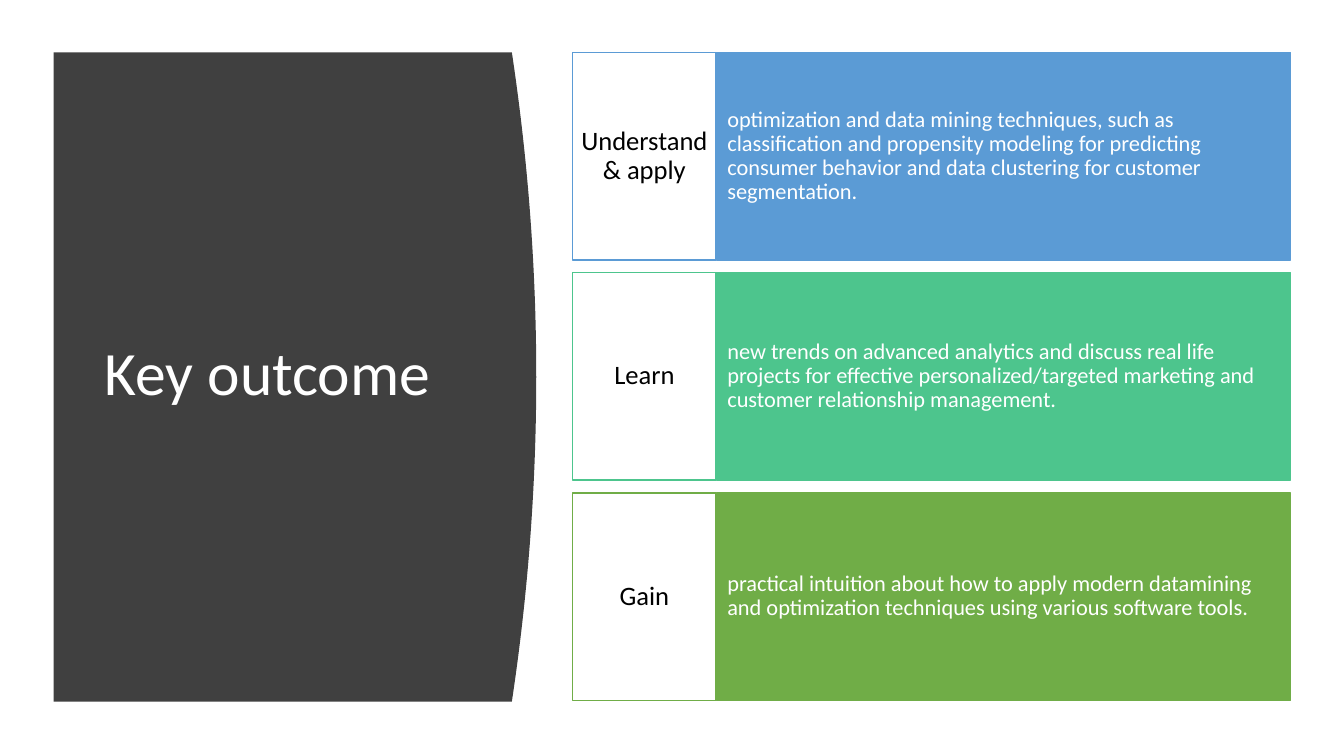
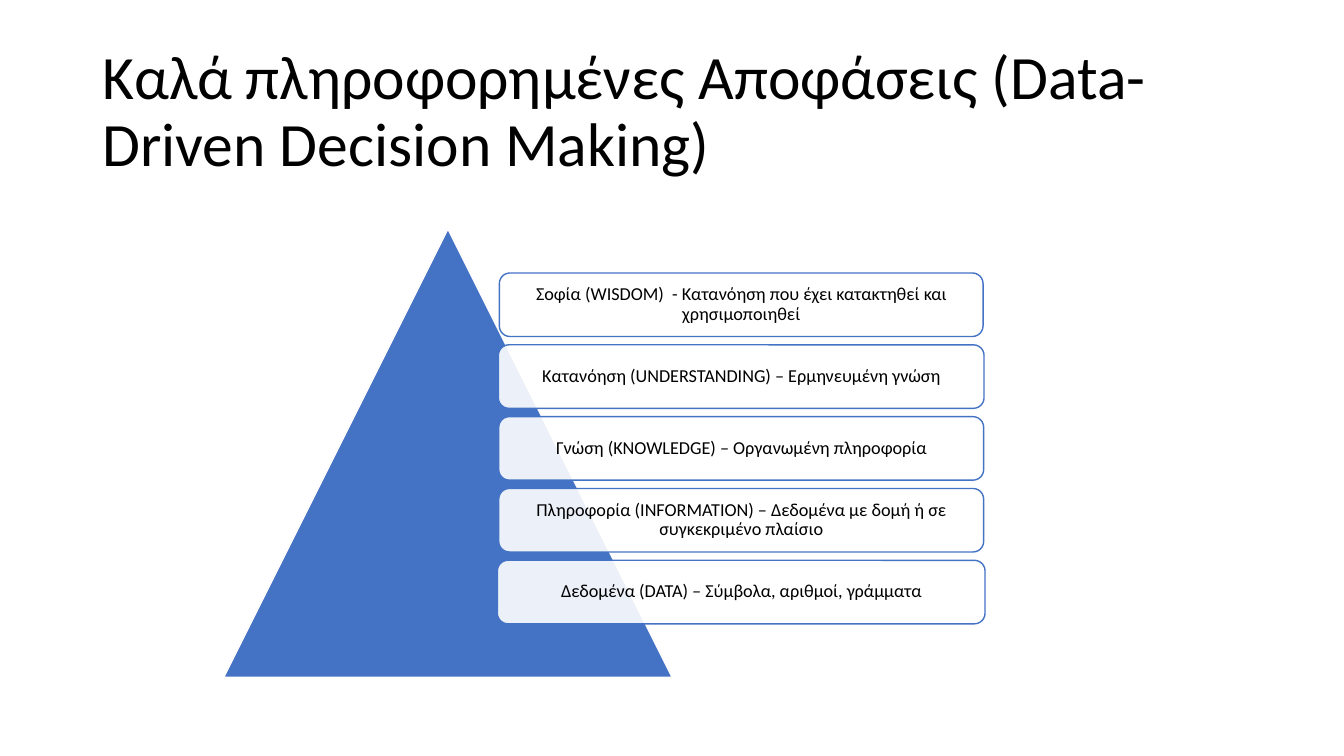
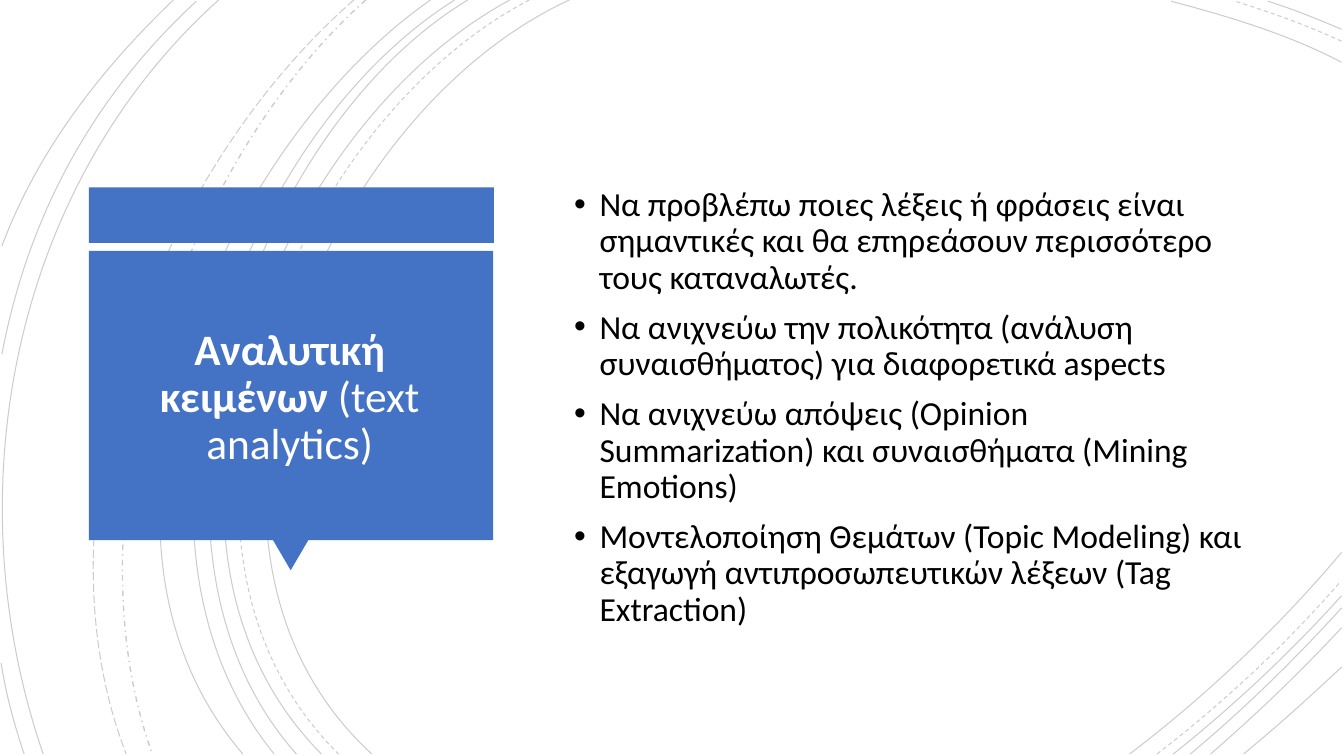
from dataclasses import dataclass
from typing import Any

from lxml import etree
from pptx import Presentation, util as u
from pptx.dml.color import RGBColor
from pptx.enum import dml, shapes, text
from pptx.oxml.ns import qn

FONT = "Calibri"
WHITE, BLACK, CHARCOAL, BLUE = "FFFFFF", "000000", "404040", "4472C4"
SOLID = dml.MSO_LINE.SOLID
SHAPE = shapes.MSO_SHAPE
LEFT, CENTER = text.PP_ALIGN.LEFT, text.PP_ALIGN.CENTER
DEFAULT_INSET = (0.25, 0.13)

Point = tuple[float, float]
Box = tuple[float, float, float, float]


@dataclass(frozen=True)
class Outcome:
    label: str
    detail: str
    color: str


@dataclass(frozen=True)
class Level:
    content: str
    width: float


@dataclass(frozen=True)
class Arc:
    start: Point
    control_a: Point
    control_b: Point
    end: Point
    dash: Any = SOLID
    weight: float = 0.75


OUTCOMES = [
    Outcome("Understand & apply", "optimization and data mining techniques, such as classification and propensity "
            "modeling for predicting consumer behavior and data clustering for customer segmentation.", "5B9BD5"),
    Outcome("Learn", "new trends on advanced analytics and discuss real life projects for effective "
            "personalized/targeted marketing and customer relationship management.", "4DC58D"),
    Outcome("Gain", "practical intuition about how to apply modern datamining and optimization techniques "
            "using various software tools.", "70AD47"),
]

LEVELS = [
    Level("Σοφία (WISDOM)  - Κατανόηση που έχει κατακτηθεί και χρησιμοποιηθεί", 12.19),
    Level("Κατανόηση (UNDERSTANDING) – Ερμηνευμένη γνώση", 12.24),
    Level("Γνώση (KNOWLEDGE) – Οργανωμένη πληροφορία", 12.22),
    Level("Πληροφορία (INFORMATION) – Δεδομένα με δομή ή σε συγκεκριμένο πλαίσιο", 12.22),
    Level("Δεδομένα (DATA) – Σύμβολα, αριθμοί, γράμματα", 12.29),
]

GOALS = [
    "Να προβλέπω ποιες λέξεις ή φράσεις είναι σημαντικές και θα επηρεάσουν περισσότερο τους καταναλωτές.",
    "Να ανιχνεύω την πολικότητα (ανάλυση συναισθήματος) για διαφορετικά aspects",
    "Να ανιχνεύω απόψεις (Opinion Summarization) και συναισθήματα (Mining Emotions)",
    "Μοντελοποίηση Θεμάτων (Topic Modeling) και εξαγωγή αντιπροσωπευτικών λέξεων (Tag Extraction)",
]

ARCS = [
    Arc((14.35, 0), (8, 2.92), (3.63, 13.72), (9.37, 19)),
    Arc((33.81, 1.57), (32.46, 0.86), (30.94, 0.41), (29.51, 0.03)),
    Arc((28.47, 19), (30.4, 17.53), (32.23, 15.8), (33.81, 13.92)),
    Arc((13.34, 0), (7.24, 3.18), (3.12, 13.64), (8.53, 19), dml.MSO_LINE.DASH),
    Arc((33.81, 1.04), (32.94, 0.64), (32, 0.3), (31.12, 0.03), dml.MSO_LINE.DASH),
    Arc((29.16, 19), (30.81, 17.73), (32.39, 16.26), (33.78, 14.66), dml.MSO_LINE.DASH),
    Arc((12.85, 0), (6.86, 3.23), (2.79, 13.64), (8.1, 19)),
    Arc((33.81, 0.74), (33.2, 0.48), (32.59, 0.23), (31.95, 0.03)),
    Arc((29.57, 19), (31.06, 17.81), (32.51, 16.46), (33.81, 15.01)),
    Arc((11.79, 0), (6.2, 3.38), (2.79, 13.74), (7.47, 19)),
    Arc((30, 19), (31.34, 17.88), (32.61, 16.64), (33.81, 15.32)),
    Arc((11.46, 0), (5.87, 3.51), (2.46, 13.54), (6.91, 19)),
    Arc((30.51, 19), (31.65, 18.01), (32.77, 16.94), (33.81, 15.82)),
    Arc((10.85, 0), (5.51, 3.73), (1.35, 13.44), (6.12, 19)),
    Arc((31.34, 19), (32.18, 18.31), (32.99, 17.58), (33.81, 16.81)),
    Arc((9.22, 0), (4.47, 4.22), (1.65, 12.93), (3.84, 19), dml.MSO_LINE.DASH_DOT, 1),
    Arc((8.92, 0), (3.99, 4.29), (0.74, 12.67), (3.18, 19), dml.MSO_LINE.LONG_DASH),
    Arc((5.51, 0), (0.28, 4.7), (-1.17, 12.45), (1.09, 19)),
    Arc((4.95, 0.03), (2.34, 2.44), (0.71, 5.44), (0.05, 8.92)),
    Arc((0.03, 16.71), (0.15, 17.5), (0.36, 18.26), (0.61, 19)),
    Arc((4.37, 0), (2.54, 1.75), (0.94, 3.81), (0.05, 6.2)),
]

PANEL_EDGE = Arc((12.9, 1.32), (13.72, 6.77), (13.72, 12.23), (12.9, 17.68))


def rgb(color: str) -> RGBColor:
    return RGBColor.from_string(color)


def set_opacity(shape: Any, tag: str, percent: int) -> None:
    for color in shape._element.spPr.find(qn(tag)).iter(qn("a:srgbClr")):
        etree.SubElement(color, qn("a:alpha"), val=str(percent * 1000))


def style(shape: Any, fill: str | None = None, line: str | None = None, weight: float = 1) -> Any:
    shape.shadow.inherit = False
    if fill:
        shape.fill.solid()
        shape.fill.fore_color.rgb = rgb(fill)
    else:
        shape.fill.background()
    if line:
        shape.line.color.rgb = rgb(line)
        shape.line.width = u.Pt(weight)
    else:
        shape.line.fill.background()
    return shape


def add_shape(slide: Any, kind: Any, box: Box, fill: str, line: str | None = None) -> Any:
    return style(slide.shapes.add_shape(kind, *map(u.Cm, box)), fill, line)


def add_bullet(paragraph: Any) -> None:
    properties = paragraph._p.get_or_add_pPr()
    properties.set("marL", str(u.Cm(0.64)))
    properties.set("indent", str(u.Cm(-0.64)))
    etree.SubElement(properties, qn("a:buFont"), typeface="Arial")
    etree.SubElement(properties, qn("a:buChar"), char="•")


def write_text(shape: Any, content: str, *, size: float, color: str = BLACK, align: Any = LEFT,
               inset: Point = DEFAULT_INSET, bold_lead: str = "", bullets: bool = False) -> None:
    frame = shape.text_frame
    frame.word_wrap = True
    frame.vertical_anchor = text.MSO_ANCHOR.MIDDLE
    frame.margin_left = frame.margin_right = u.Cm(inset[0])
    frame.margin_top = frame.margin_bottom = u.Cm(inset[1])
    for index, line in enumerate(content.split("\n")):
        paragraph = frame.add_paragraph() if index else frame.paragraphs[0]
        paragraph.alignment = align
        paragraph.line_spacing = 0.9
        if bullets:
            paragraph.space_before = u.Pt(10)
            add_bullet(paragraph)
        for words, bold in ((bold_lead, True), (line, False)):
            if words:
                run = paragraph.add_run()
                run.text = words
                run.font.name, run.font.size, run.font.bold = FONT, u.Pt(size), bold
                run.font.color.rgb = rgb(color)


def add_text(slide: Any, box: Box, content: str, **formatting: Any) -> None:
    write_text(slide.shapes.add_textbox(*map(u.Cm, box)), content, **formatting)


def add_title(slide: Any, box: Box, content: str, size: float = 44, **formatting: Any) -> None:
    add_text(slide, box, content, size=size, **formatting)


def add_curve(slide: Any, arc: Arc, corners: tuple[Point, ...] = ()) -> Any:
    """Draw a cubic Bezier curve, closed through the corners if there are any."""
    points = (arc.start, arc.control_a, arc.control_b, arc.end, *corners)
    first, *rest = [(u.Cm(x), u.Cm(y)) for x, y in points]
    builder = slide.shapes.build_freeform(*first)
    builder.add_line_segments(rest, close=bool(corners))
    shape = builder.convert_to_shape()
    segments = list(shape._element.iter(qn("a:lnTo")))[:3]
    curve = etree.Element(qn("a:cubicBezTo"))
    segments[0].addprevious(curve)
    for segment in segments:
        curve.append(segment[0])
        segment.getparent().remove(segment)
    return shape


def add_arc(slide: Any, arc: Arc) -> None:
    shape = style(add_curve(slide, arc), line=BLACK, weight=arc.weight)
    shape.line.dash_style = arc.dash
    set_opacity(shape, "a:ln", 20)


def build_outcomes(slide: Any) -> None:
    style(add_curve(slide, PANEL_EDGE, ((1.35, 17.68), (1.35, 1.32))), CHARCOAL)
    add_title(slide, (2.39, 2.82, 9.5, 13.31), "Key outcome", color=WHITE)
    left, top, label_width, detail_width, height, pitch = 14.43, 1.32, 3.62, 14.48, 5.23, 5.55
    for row, outcome in enumerate(OUTCOMES):
        y = top + row * pitch
        detail = add_shape(slide, SHAPE.RECTANGLE, (left + label_width, y, detail_width, height),
                           outcome.color, outcome.color)
        write_text(detail, outcome.detail, size=16, color=WHITE, inset=(0.28, 1.32))
        label = add_shape(slide, SHAPE.RECTANGLE, (left, y, label_width, height), WHITE, outcome.color)
        write_text(label, outcome.label, size=19, align=CENTER, inset=(0.2, 0.51))


def build_pyramid(slide: Any) -> None:
    add_title(slide, (2.33, 1.01, 29.21, 3.68), "Καλά πληροφορημένες Αποφάσεις (Data-Driven Decision Making)")
    add_shape(slide, SHAPE.ISOSCELES_TRIANGLE, (5.64, 5.77, 11.3, 11.3), BLUE, WHITE)
    center, top, height, pitch = 18.68, 6.88, 1.6, 1.81
    for row, level in enumerate(LEVELS):
        box = (center - level.width / 2, top + row * pitch, level.width, height)
        card = add_shape(slide, SHAPE.ROUNDED_RECTANGLE, box, WHITE, BLUE)
        set_opacity(card, "a:solidFill", 90)
        write_text(card, level.content, size=13, align=CENTER, inset=(0.13, 0.13))


def build_text_analytics(slide: Any) -> None:
    for arc in ARCS:
        add_arc(slide, arc)
    add_shape(slide, SHAPE.RECTANGLE, (2.24, 4.72, 10.21, 1.4), BLUE)
    pointer = add_shape(slide, SHAPE.ISOSCELES_TRIANGLE, (6.88, 13.61, 0.89, 0.76), BLUE)
    pointer.rotation = 180
    add_shape(slide, SHAPE.RECTANGLE, (2.24, 6.32, 10.19, 7.29), BLUE)
    add_title(slide, (2.51, 6.71, 9.58, 6.65), "(text analytics)", size=31, color=WHITE, align=CENTER,
              bold_lead="Αναλυτική κειμένων ")
    add_text(slide, (14.22, 2.24, 17.45, 16.08), "\n".join(GOALS), size=24, bullets=True)


def main() -> None:
    presentation = Presentation()
    presentation.slide_width, presentation.slide_height = u.Cm(33.87), u.Cm(19.05)
    blank = presentation.slide_layouts[6]
    for build in (build_outcomes, build_pyramid, build_text_analytics):
        build(presentation.slides.add_slide(blank))
    presentation.save("out.pptx")


if __name__ == "__main__":
    main()
